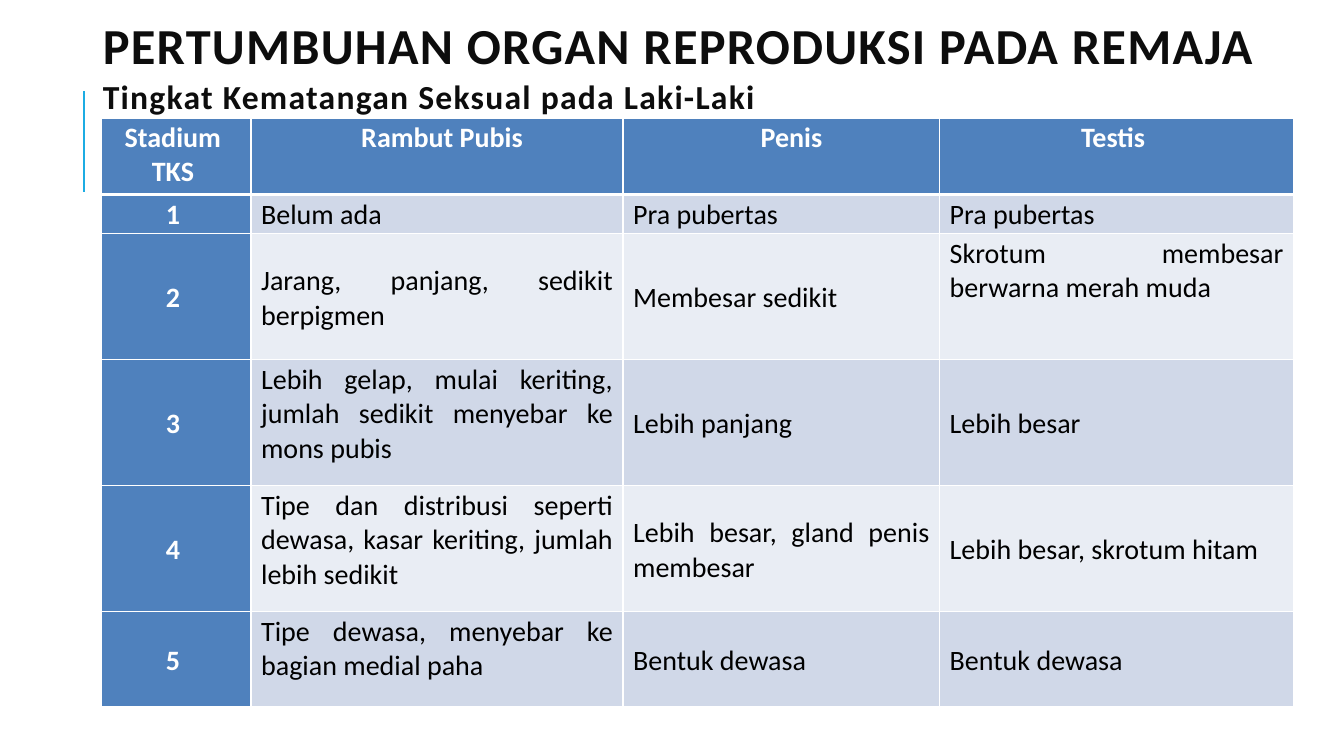
"""Build the slide on stages of male sexual maturity in adolescence."""
from lxml.etree import SubElement
from pptx import Presentation
from pptx.dml.color import RGBColor
from pptx.enum.shapes import MSO_CONNECTOR as Connector
from pptx.enum.text import MSO_ANCHOR as Anchor, PP_ALIGN as Align
from pptx.oxml import parse_xml
from pptx.oxml.ns import nsdecls, qn
from pptx.util import Inches, Pt

HEADINGS = [
    ("PERTUMBUHAN ORGAN REPRODUKSI PADA REMAJA", "title"),
    ("Tingkat Kematangan Seksual pada Laki-Laki", "subtitle"),
]
ROWS = [
    ("Stadium TKS", "Rambut Pubis", "Penis", "Testis"),
    ("1", "Belum ada", "Pra pubertas", "Pra pubertas"),
    ("2", "Jarang, panjang, sedikit berpigmen", "Membesar sedikit",
     "Skrotum membesar berwarna merah muda"),
    ("3", "Lebih gelap, mulai keriting, jumlah sedikit menyebar ke mons pubis",
     "Lebih panjang", "Lebih besar"),
    ("4", "Tipe dan distribusi seperti dewasa, kasar keriting, jumlah lebih sedikit",
     "Lebih besar, gland penis membesar", "Lebih besar, skrotum hitam"),
    ("5", "Tipe dewasa, menyebar ke bagian medial paha", "Bentuk dewasa", "Bentuk dewasa"),
]
COLUMN_WIDTHS = [1.48, 3.69, 3.14, 3.51]
ROW_HEIGHTS = [0.76, 0.39, 1.25, 1.25, 1.25, 0.94]
HEADER_INDENTS = [0, 0.17, 0.27, 0]
BODY_INDENT = 0.1
TOP_CELLS = {(2, 3), (3, 1), (4, 1), (5, 1)}
LEFT, TABLE_TOP, WIDTH = 1.01, 1.17, 11.82
THEME = {
    "font": "Calibri",
    "sizes": {"title": 36, "subtitle": 24, "table": 20},
    "heading": "0D0D0D", "body": "000000", "white": "FFFFFF",
    "header": "4F81BD", "bands": ("D0D8E8", "E9EDF4"), "accent": "1CACE3",
}


def apply(target, values):
    for name, value in values.items():
        setattr(target, name, value)


def write(para, text, size, color, bold=True):
    span = para.add_run()
    span.text = text
    apply(span.font, {"name": THEME["font"], "size": Pt(THEME["sizes"][size]), "bold": bold})
    span.font.color.rgb = RGBColor.from_string(color)
    return span


def indent(para, left, right=0):
    properties = para._p.get_or_add_pPr()
    properties.set("marL", str(Inches(left)))
    properties.set("marR", str(Inches(right)))


def add_borders(cell, row):
    properties = cell._tc.get_or_add_tcPr()
    widths = {"L": 1, "R": 1, "T": 3 if row == 1 else 1, "B": 3 if row == 0 else 1}
    for place, (side, width) in enumerate(widths.items()):
        properties.insert(place, parse_xml(
            f'<a:ln{side} {nsdecls("a")} w="{Pt(width)}"><a:solidFill>'
            f'<a:srgbClr val="{THEME["white"]}"/></a:solidFill></a:ln{side}>'))


def add_accent(page):
    line = page.shapes.add_connector(
        Connector.STRAIGHT, Inches(0.83), Inches(1.9), Inches(0.83), Inches(0.9))
    line.line.width = Pt(1.44)
    line.line.color.rgb = RGBColor.from_string(THEME["accent"])
    SubElement(line._element.spPr, qn("a:effectLst"))


def add_headings(page):
    box = page.shapes.add_textbox(Inches(LEFT), Inches(0.13), Inches(WIDTH), Inches(1.04))
    frame = box.text_frame
    apply(frame, {"word_wrap": True, "margin_left": 0, "margin_right": 0,
                  "margin_top": Inches(0.01), "margin_bottom": 0})
    for number, (text, size) in enumerate(HEADINGS):
        para = frame.add_paragraph() if number else frame.paragraphs[0]
        para.space_before = Pt(1)
        indent(para, 0.01)
        span = write(para, text, size, THEME["heading"])
        span.font._element.set("spc", "90")


def fill_cell(cell, row, column, text):
    is_header = row == 0
    is_label = is_header or column == 0
    at_top = row < 2 or (row, column) in TOP_CELLS
    apply(cell, {"margin_left": 0, "margin_right": Inches(0.07),
                 "margin_top": Inches(0.03), "margin_bottom": 0,
                 "vertical_anchor": Anchor.TOP if at_top else Anchor.MIDDLE})
    cell.fill.solid()
    fill = THEME["header"] if is_label else THEME["bands"][(row - 1) % 2]
    cell.fill.fore_color.rgb = RGBColor.from_string(fill)
    para = cell.text_frame.paragraphs[0]
    para.alignment = Align.CENTER if is_label else Align.JUSTIFY
    if is_label:
        indent(para, HEADER_INDENTS[column] if is_header else 0)
    else:
        indent(para, BODY_INDENT, 0.03)
    write(para, text, "table", THEME["white"] if is_label else THEME["body"], is_label)
    add_borders(cell, row)


def add_stages(page):
    table = page.shapes.add_table(
        len(ROWS), len(COLUMN_WIDTHS), Inches(LEFT), Inches(TABLE_TOP),
        Inches(WIDTH), Inches(sum(ROW_HEIGHTS))).table
    for column, width in zip(table.columns, COLUMN_WIDTHS):
        column.width = Inches(width)
    for row, height in zip(table.rows, ROW_HEIGHTS):
        row.height = Inches(height)
    for row, texts in enumerate(ROWS):
        for column, text in enumerate(texts):
            fill_cell(table.cell(row, column), row, column, text)


def main():
    deck = Presentation()
    apply(deck, {"slide_width": Inches(13.33), "slide_height": Inches(7.5)})
    page = deck.slides.add_slide(deck.slide_layouts[6])
    add_accent(page)
    add_headings(page)
    add_stages(page)
    deck.save("out.pptx")


if __name__ == "__main__":
    main()
